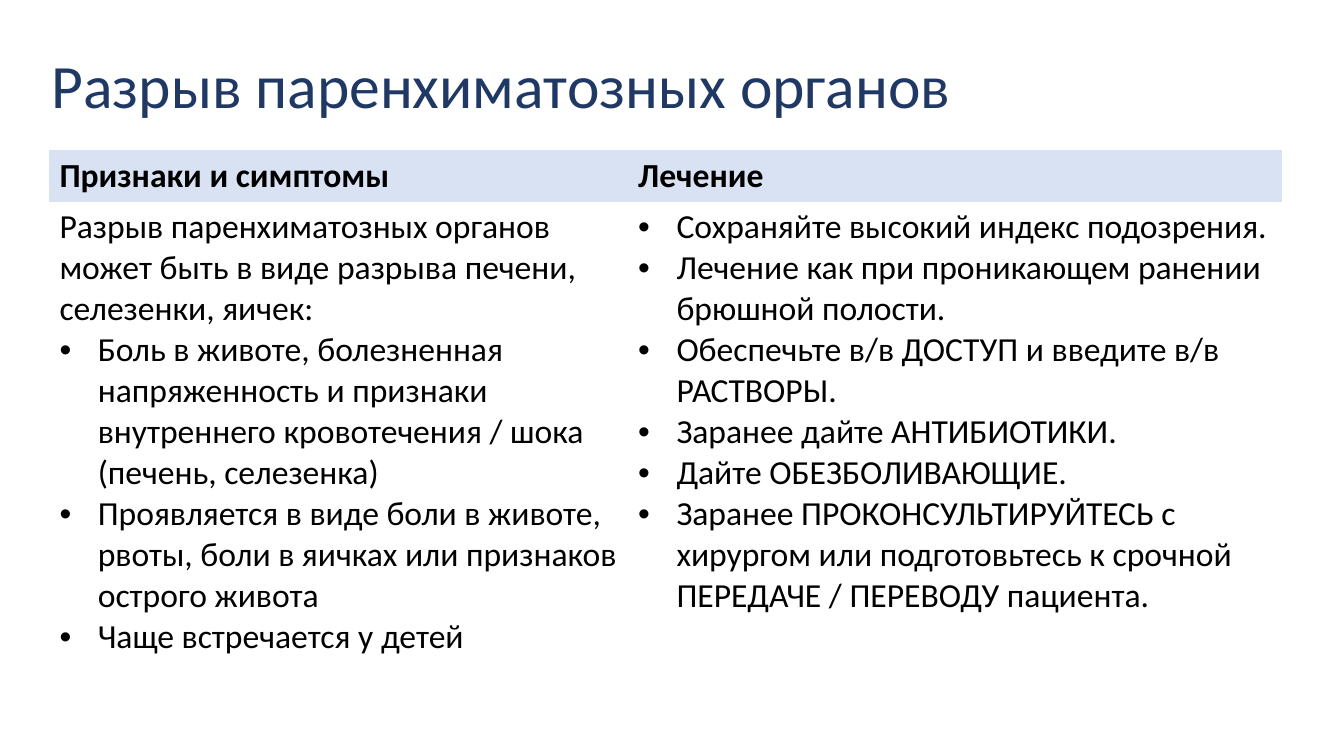
from lxml import etree
from pptx import Presentation
from pptx.dml.color import RGBColor
from pptx.enum.text import MSO_ANCHOR, PP_ALIGN
from pptx.oxml.ns import qn
from pptx.util import Inches, Pt

LEFT = PP_ALIGN.LEFT
MIDDLE = MSO_ANCHOR.MIDDLE
TITLE_ONLY = 5
FONT = "Calibri"
NO_STYLE = "{2D5ABB26-0587-4C30-8999-92F81FD0307C}"
INDENT = 0.38

TITLE = "Разрыв паренхиматозных органов"
HEADINGS = ["Признаки и симптомы", "Лечение"]
SYMPTOMS_INTRO = ("Разрыв паренхиматозных органов может быть в виде разрыва "
                  "печени, селезенки, яичек:")
SYMPTOMS = [
    "Боль в животе, болезненная напряженность и признаки внутреннего "
    "кровотечения / шока (печень, селезенка)",
    "Проявляется в виде боли в животе, рвоты, боли в яичках или признаков "
    "острого живота",
    "Чаще встречается у детей",
]
TREATMENT = [
    "Сохраняйте высокий индекс подозрения.",
    "Лечение как при проникающем ранении брюшной полости.",
    "Обеспечьте в/в ДОСТУП и введите в/в РАСТВОРЫ.",
    "Заранее дайте АНТИБИОТИКИ.",
    "Дайте ОБЕЗБОЛИВАЮЩИЕ.",
    "Заранее ПРОКОНСУЛЬТИРУЙТЕСЬ с хирургом или подготовьтесь к срочной "
    "ПЕРЕДАЧЕ / ПЕРЕВОДУ пациента.",
]


def color(value):
    return RGBColor.from_string(value)


def style_font(font, size, value, bold=False):
    font.name = FONT
    font.size = Pt(size)
    font.bold = bold
    font.color.rgb = color(value)


def add_bullet(p):
    pPr = p._p.get_or_add_pPr()
    pPr.set("marL", str(Inches(INDENT)))
    pPr.set("indent", str(-Inches(INDENT)))
    etree.SubElement(pPr, qn("a:buFont"), typeface="Arial")
    etree.SubElement(pPr, qn("a:buChar"), char="•")


def fill_cell(cell, lines, bulleted=False, bold=False):
    tf = cell.text_frame
    for text in lines:
        p = tf.paragraphs[0] if not tf.text else tf.add_paragraph()
        p.text = text
        if bulleted:
            add_bullet(p)
        style_font(p.runs[0].font, 24, "000000", bold)


def add_title(s, left, top, width, height):
    sp = s.shapes.title
    sp.left, sp.top = Inches(left), Inches(top)
    sp.width, sp.height = Inches(width), Inches(height)
    tf = sp.text_frame
    tf.text = TITLE
    tf.word_wrap = True
    tf.vertical_anchor = MIDDLE
    p = tf.paragraphs[0]
    p.alignment = LEFT
    p.line_spacing = 0.9
    style_font(p.runs[0].font, 44, "1F3864")


def add_care_table(s, left, top, width, height):
    frame = s.shapes.add_table(2, 2, Inches(left), Inches(top),
                               Inches(width), Inches(height))
    table = frame.table
    table.first_row = False
    table.horz_banding = False
    table._tbl.tblPr.find(qn("a:tableStyleId")).text = NO_STYLE
    symptoms_width, heading_height = 5.74, 0.51
    table.columns[0].width = Inches(symptoms_width)
    table.columns[1].width = Inches(width - symptoms_width)
    table.rows[0].height = Inches(heading_height)
    table.rows[1].height = Inches(height - heading_height)
    for col, heading in enumerate(HEADINGS):
        cell = table.cell(0, col)
        cell.fill.solid()
        cell.fill.fore_color.rgb = color("D8E2F3")
        fill_cell(cell, [heading], bold=True)
        table.cell(1, col).fill.background()
    fill_cell(table.cell(1, 0), [SYMPTOMS_INTRO])
    fill_cell(table.cell(1, 0), SYMPTOMS, bulleted=True)
    fill_cell(table.cell(1, 1), TREATMENT, bulleted=True)


def main():
    prs = Presentation()
    prs.slide_width = Inches(13.33)
    prs.slide_height = Inches(7.5)
    s = prs.slides.add_slide(prs.slide_layouts[TITLE_ONLY])
    add_title(s, 0.41, 0.15, 11.5, 1.45)
    add_care_table(s, 0.49, 1.49, 12.23, 5.8)
    prs.save("out.pptx")


if __name__ == "__main__":
    main()
